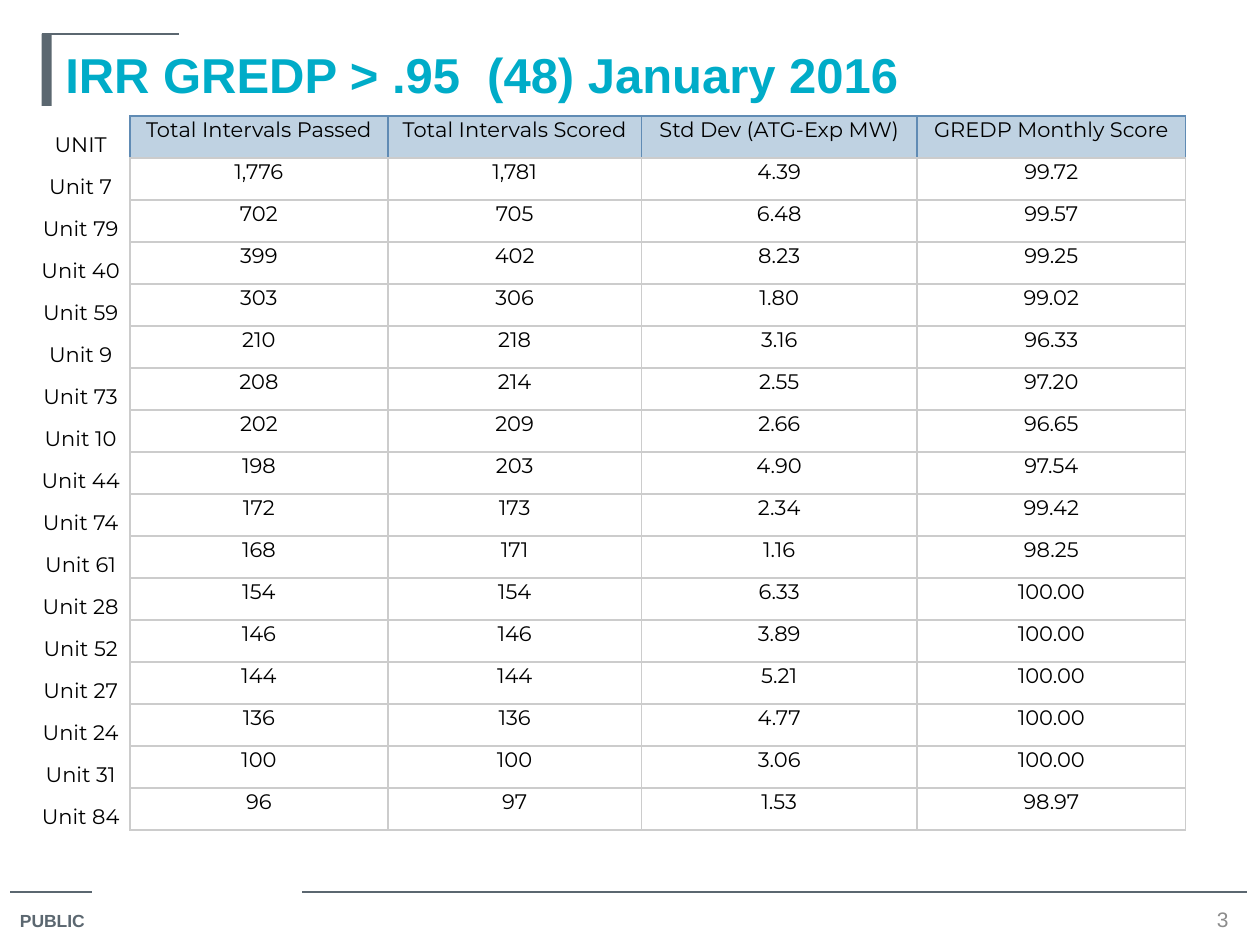
from lxml import etree
from pptx import Presentation
from pptx.dml.color import RGBColor
from pptx.enum import shapes, text
from pptx.oxml import ns
from pptx.util import Inches, Pt

SLATE = RGBColor(0x5B, 0x67, 0x70)
TEAL = RGBColor(0x00, 0xAC, 0xC8)
GREY = RGBColor(0x8C, 0x8C, 0x8C)
BLACK = RGBColor(0, 0, 0)
HEADER_FILL = RGBColor(0xBF, 0xD2, 0xE2)
HEADER_BORDER = RGBColor(0x60, 0x8B, 0xB4)
GRID = RGBColor(0xCC, 0xCC, 0xCC)

COLUMN_WIDTHS = (0.78, 2.05, 2.01, 2.19, 2.13)
ROW_HEIGHT = 5.67 / 17
SCORES = (
    ("UNIT", "Total Intervals Passed", "Total Intervals Scored",
     "Std Dev (ATG-Exp MW)", "GREDP Monthly Score"),
    ("Unit 7", "1,776", "1,781", "4.39", "99.72"),
    ("Unit 79", "702", "705", "6.48", "99.57"),
    ("Unit 40", "399", "402", "8.23", "99.25"),
    ("Unit 59", "303", "306", "1.80", "99.02"),
    ("Unit 9", "210", "218", "3.16", "96.33"),
    ("Unit 73", "208", "214", "2.55", "97.20"),
    ("Unit 10", "202", "209", "2.66", "96.65"),
    ("Unit 44", "198", "203", "4.90", "97.54"),
    ("Unit 74", "172", "173", "2.34", "99.42"),
    ("Unit 61", "168", "171", "1.16", "98.25"),
    ("Unit 28", "154", "154", "6.33", "100.00"),
    ("Unit 52", "146", "146", "3.89", "100.00"),
    ("Unit 27", "144", "144", "5.21", "100.00"),
    ("Unit 24", "136", "136", "4.77", "100.00"),
    ("Unit 31", "100", "100", "3.06", "100.00"),
    ("Unit 84", "96", "97", "1.53", "98.97"),
)


def style_font(font, name, size, color, bold=False):
    font.name = name
    font.size = Pt(size)
    font.color.rgb = color
    font.bold = bold


def add_rule(slide, left, right, top):
    """Draw a thin horizontal line."""
    rule = slide.shapes.add_connector(
        shapes.MSO_CONNECTOR.STRAIGHT,
        Inches(left), Inches(top), Inches(right), Inches(top))
    rule.line.color.rgb = SLATE
    rule.line.width = Pt(0.75)
    etree.SubElement(rule._element.spPr, ns.qn("a:effectLst"))


def add_title_bar(slide):
    bar = slide.shapes.add_shape(
        shapes.MSO_SHAPE.RECTANGLE,
        Inches(0.33), Inches(0.27), Inches(0.08), Inches(0.57))
    bar.shadow.inherit = False
    bar.fill.solid()
    bar.fill.fore_color.rgb = SLATE
    bar.line.fill.background()


def add_label(slide, wording, box, size, color, bold=False):
    """Add one line of Arial text and return its frame."""
    frame = slide.shapes.add_textbox(*map(Inches, box)).text_frame
    frame.word_wrap = True
    frame.text = wording
    style_font(frame.paragraphs[0].runs[0].font, "Arial", size, color, bold)
    return frame


def set_borders(cell, **colors):
    """Give the sides L, R, T, B a colour; the sides left out get no line."""
    properties = cell._tc.get_or_add_tcPr()
    for side in "LRTB":
        border = etree.SubElement(
            properties, ns.qn(f"a:ln{side}"), w=str(Pt(1)))
        if side in colors:
            fill = etree.SubElement(border, ns.qn("a:solidFill"))
            etree.SubElement(
                fill, ns.qn("a:srgbClr"), val=str(colors[side]))
        else:
            etree.SubElement(border, ns.qn("a:noFill"))


def fill_cell(cell, wording, is_header, is_unit):
    cell.margin_left = cell.margin_right = cell.margin_top = Inches(0.01)
    cell.margin_bottom = 0
    cell.vertical_anchor = (
        text.MSO_ANCHOR.BOTTOM if is_unit else text.MSO_ANCHOR.TOP)

    edge = HEADER_BORDER if is_header else GRID
    if is_unit:
        set_borders(cell, R=edge)
    else:
        top = HEADER_BORDER if is_header else GRID
        set_borders(cell, L=edge, R=edge, T=top, B=GRID)

    if is_header and not is_unit:
        cell.fill.solid()
        cell.fill.fore_color.rgb = HEADER_FILL
    else:
        cell.fill.background()

    cell.text = wording
    paragraph = cell.text_frame.paragraphs[0]
    paragraph.alignment = text.PP_ALIGN.CENTER
    style_font(paragraph.runs[0].font, "Montserrat", 12, BLACK)


def add_score_table(slide):
    table = slide.shapes.add_table(
        len(SCORES), len(COLUMN_WIDTHS), Inches(0.25), Inches(0.92),
        Inches(sum(COLUMN_WIDTHS)), Inches(ROW_HEIGHT * len(SCORES))).table
    table.first_row = table.horz_banding = False
    for column, width in zip(table.columns, COLUMN_WIDTHS):
        column.width = Inches(width)
    for r, scores in enumerate(SCORES):
        table.rows[r].height = Inches(ROW_HEIGHT)
        for c, wording in enumerate(scores):
            fill_cell(table.cell(r, c), wording, r == 0, c == 0)


def add_page_number(slide):
    number = add_label(slide, "3", (9.58, 7.18, 0.25, 0.23), 12, GREY)
    number.margin_left = number.margin_right = 0
    number.margin_top = number.margin_bottom = 0
    number.vertical_anchor = text.MSO_ANCHOR.MIDDLE
    number.paragraphs[0].alignment = text.PP_ALIGN.CENTER


def main():
    deck = Presentation()
    deck.slide_width, deck.slide_height = Inches(10), Inches(7.5)
    slide = deck.slides.add_slide(deck.slide_layouts[6])

    add_rule(slide, 0.08, 0.73, 7.08)
    add_rule(slide, 2.4, 9.9, 7.08)
    add_label(slide, "PUBLIC", (0.06, 7.17, 0.77, 0.28), 10, SLATE, True)
    add_title_bar(slide)
    add_rule(slide, 0.33, 1.42, 0.27)
    add_page_number(slide)
    title = add_label(slide, "IRR GREDP > .95  (48) January 2016",
                      (0.42, 0.27, 9.25, 0.73), 28, TEAL, True)
    title.margin_top = Inches(0.08)
    add_score_table(slide)

    deck.save("out.pptx")


if __name__ == "__main__":
    main()
